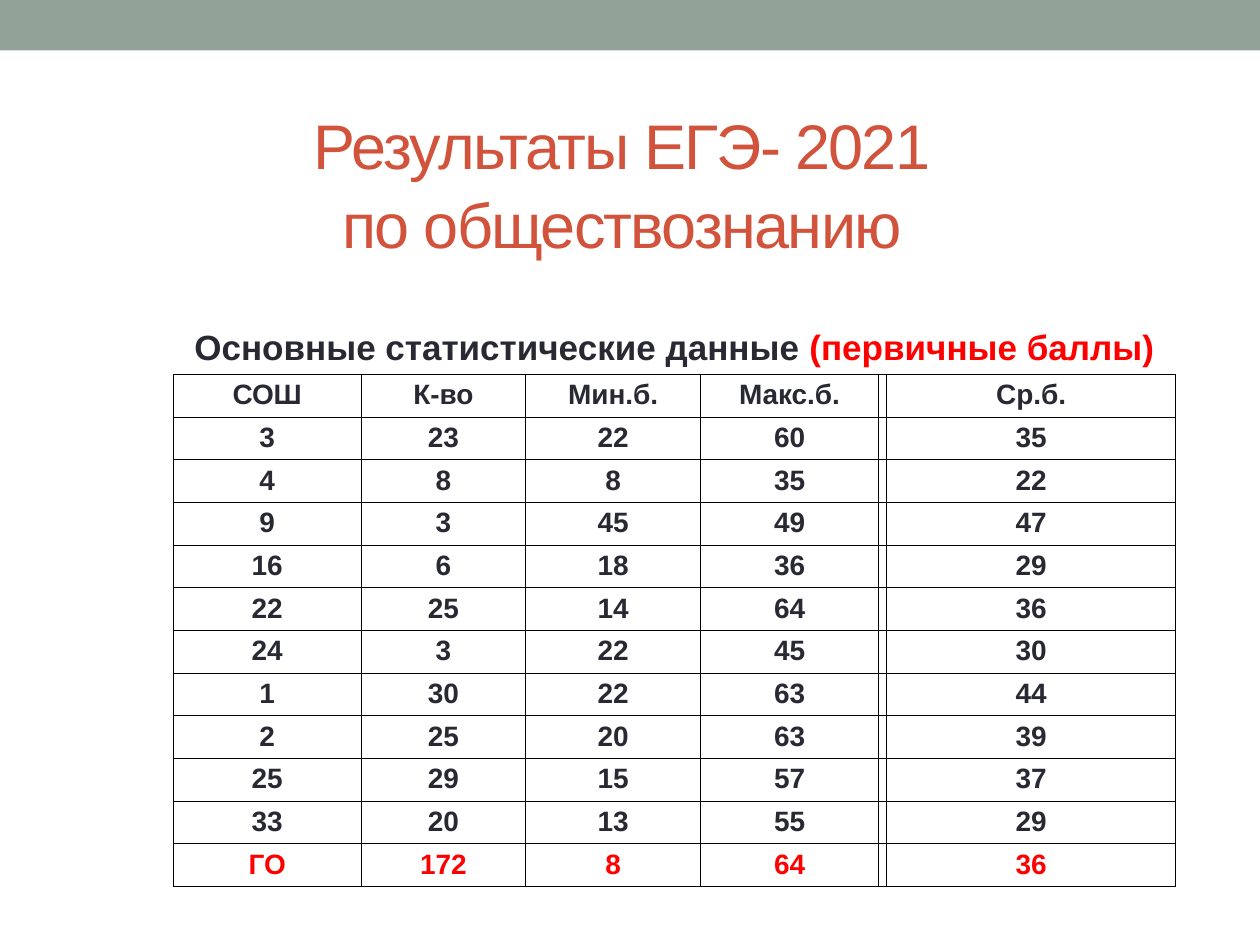
from dataclasses import dataclass

from lxml.etree import SubElement
from pptx import Presentation
from pptx.dml.color import RGBColor
from pptx.enum.shapes import MSO_SHAPE as Shape
from pptx.enum.text import MSO_ANCHOR as Anchor, MSO_AUTO_SIZE as AutoSize, PP_ALIGN as Align
from pptx.oxml.ns import qn
from pptx.util import Pt


@dataclass(frozen=True)
class Theme:
    font: str = "Arial"
    band: str = "93A299"
    title: str = "D2533C"
    text: str = "292934"
    accent: str = "FF0000"
    border: str = "000000"
    title_size: int = 36
    caption_size: int = 20
    cell_size: int = 16
    border_width: float = 0.5


NO_TABLE_STYLE = "{2D5ABB26-0587-4C30-8999-92F81FD0307C}"
TITLE_LINES = ["Результаты ЕГЭ- 2021 ", "по обществознанию "]
CAPTION = ["Основные статистические данные ", "(первичные баллы)"]
HEADINGS = ["СОШ", "К-во", "Мин.б.", "Макс.б.", "", "Ср.б."]
SCHOOLS = [
    [3, 23, 22, 60, "", 35],
    [4, 8, 8, 35, "", 22],
    [9, 3, 45, 49, "", 47],
    [16, 6, 18, 36, "", 29],
    [22, 25, 14, 64, "", 36],
    [24, 3, 22, 45, "", 30],
    [1, 30, 22, 63, "", 44],
    [2, 25, 20, 63, "", 39],
    [25, 29, 15, 57, "", 37],
    [33, 20, 13, 55, "", 29],
]
TOTAL = ["ГО", 172, 8, 64, "", 36]
COLUMN_WIDTHS = [107.4, 94, 100, 101.6, 4.8, 165]
CAPTION_HEIGHT, ROW_HEIGHT = 52, 24.4


class SlideBuilder:
    def __init__(self, slide, theme):
        self.slide = slide
        self.theme = theme

    def add_run(self, paragraph, text, size, color, bold=False):
        run = paragraph.add_run()
        run.text = text
        font = run.font
        font.name, font.size, font.bold = self.theme.font, Pt(size), bold
        font.color.rgb = RGBColor.from_string(color)
        return run

    def add_band(self, left, top, width, height):
        band = self.slide.shapes.add_shape(
            Shape.RECTANGLE, Pt(left), Pt(top), Pt(width), Pt(height))
        band.shadow.inherit = False
        band.fill.solid()
        band.fill.fore_color.rgb = RGBColor.from_string(self.theme.band)
        band.line.fill.background()

    def set_title(self, lines, left, top, width, height):
        title = self.slide.shapes.title
        title.left, title.top = Pt(left), Pt(top)
        title.width, title.height = Pt(width), Pt(height)
        frame = title.text_frame
        frame.word_wrap, frame.auto_size = True, AutoSize.NONE
        frame.vertical_anchor = Anchor.MIDDLE
        frame.margin_top = Pt(50)  # lowers the text inside its box
        paragraph = frame.paragraphs[0]
        paragraph.alignment, paragraph.line_spacing = Align.CENTER, 1.05
        for index, line in enumerate(lines):
            if index:
                paragraph.add_line_break()
            run = self.add_run(paragraph, line, self.theme.title_size, self.theme.title)
            run.font._element.set("spc", "-100")

    def set_borders(self, cell, sides):
        properties = cell._tc.get_or_add_tcPr()
        for side in sides:
            line = SubElement(properties, qn(f"a:ln{side}"),
                              w=str(Pt(self.theme.border_width)))
            fill = SubElement(line, qn("a:solidFill"))
            SubElement(fill, qn("a:srgbClr"), val=self.theme.border)

    def fill_cell(self, cell, runs, size, sides="LRTB"):
        """Write (text, color) runs into a bordered cell."""
        self.set_borders(cell, sides)
        cell.fill.background()
        cell.vertical_anchor = Anchor.BOTTOM
        cell.margin_left = cell.margin_right = cell.margin_top = Pt(0.72)
        cell.margin_bottom = Pt(3.6)
        paragraph = cell.text_frame.paragraphs[0]
        paragraph.alignment = Align.CENTER
        for text, color in runs:
            if text:
                self.add_run(paragraph, text, size, color, bold=True)
            else:
                SubElement(paragraph._p, qn("a:endParaRPr"), sz=str(size * 100))

    def add_results_table(self, left, top):
        theme = self.theme
        rows = [HEADINGS, *SCHOOLS, TOTAL]
        height = CAPTION_HEIGHT + ROW_HEIGHT * len(rows)
        table = self.slide.shapes.add_table(
            len(rows) + 1, len(COLUMN_WIDTHS), Pt(left), Pt(top),
            Pt(sum(COLUMN_WIDTHS)), Pt(height)).table
        table.first_row = table.horz_banding = False
        table._tbl.tblPr.find(qn("a:tableStyleId")).text = NO_TABLE_STYLE
        for column, width in zip(table.columns, COLUMN_WIDTHS):
            column.width = Pt(width)
        for index, row in enumerate(table.rows):
            row.height = Pt(ROW_HEIGHT if index else CAPTION_HEIGHT)

        # Caption across all columns
        caption = table.cell(0, 0)
        caption.merge(table.cell(0, len(COLUMN_WIDTHS) - 1))
        self.fill_cell(caption, zip(CAPTION, (theme.text, theme.accent)),
                       theme.caption_size, sides="B")

        # Headings, schools and the total
        for row_index, values in enumerate(rows, start=1):
            color = theme.accent if values is TOTAL else theme.text
            for column_index, value in enumerate(values):
                self.fill_cell(table.cell(row_index, column_index),
                               [(str(value), color)], theme.cell_size)


def main():
    presentation = Presentation()
    presentation.slide_width, presentation.slide_height = Pt(720), Pt(540)
    slide = presentation.slides.add_slide(presentation.slide_layouts[5])
    builder = SlideBuilder(slide, Theme())
    builder.add_band(0, 0, 720, 28.8)
    builder.set_title(TITLE_LINES, 36, 41.8, 648, 77.8)
    builder.add_results_table(99, 162)
    presentation.save("out.pptx")


if __name__ == "__main__":
    main()
